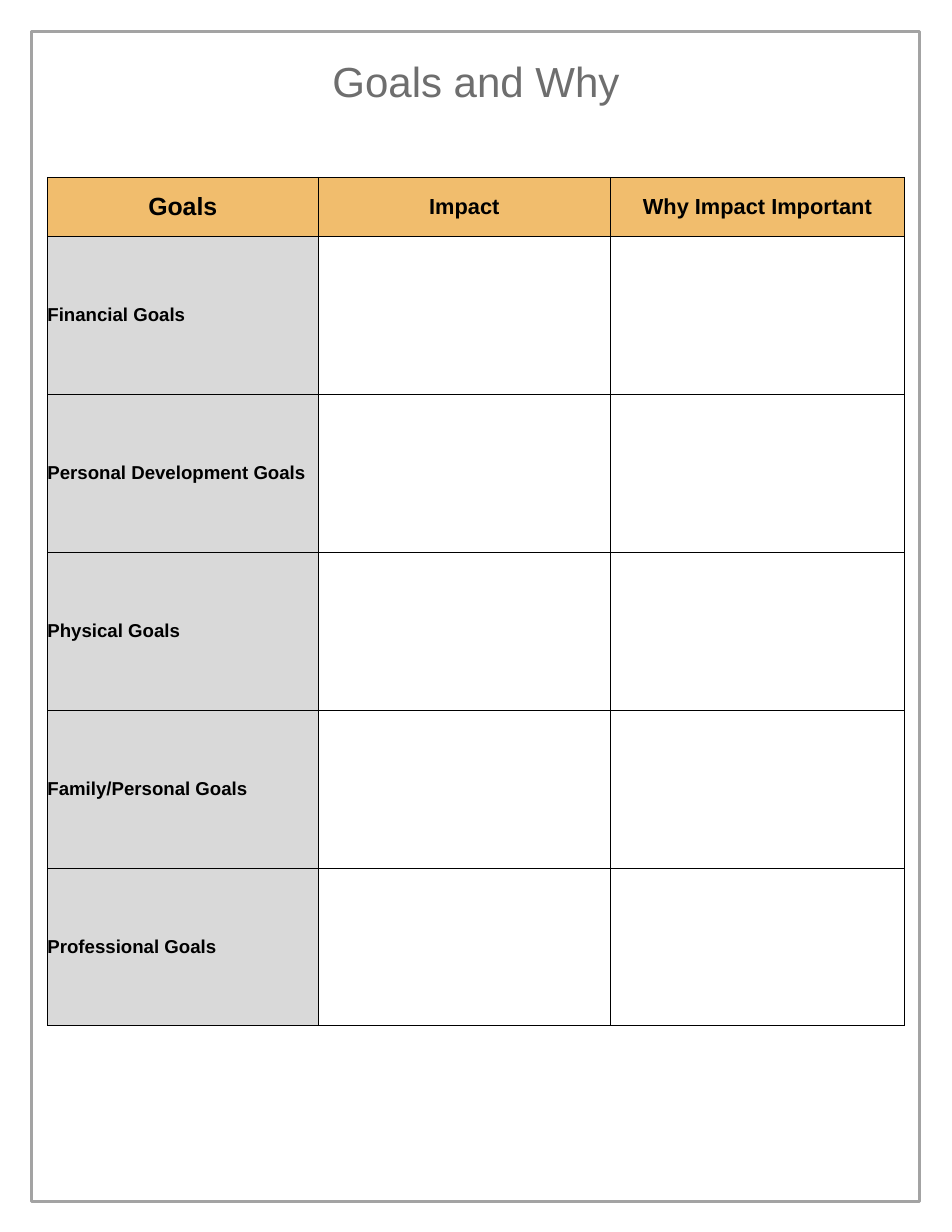
from lxml import etree
from pptx import Presentation
from pptx.dml.color import RGBColor
from pptx.enum.shapes import MSO_SHAPE
from pptx.enum.text import MSO_ANCHOR, PP_ALIGN
from pptx.util import Pt

RECTANGLE = MSO_SHAPE.RECTANGLE
TOP, MIDDLE = MSO_ANCHOR.TOP, MSO_ANCHOR.MIDDLE
LEFT, CENTER = PP_ALIGN.LEFT, PP_ALIGN.CENTER
FRAME_GRAY = RGBColor(0xA3, 0xA3, 0xA3)
TITLE_GRAY = RGBColor(0x6E, 0x6E, 0x6E)
HEADER_ORANGE = RGBColor(0xF1, 0xBD, 0x6D)
LABEL_GRAY = RGBColor(0xD9, 0xD9, 0xD9)
BLACK = RGBColor(0, 0, 0)
DRAWING = "http://schemas.openxmlformats.org/drawingml/2006/main"


def write_text(text_frame, text, size, color, alignment, bold=False):
    text_frame.text = text
    para = text_frame.paragraphs[0]
    para.alignment = alignment
    font = para.runs[0].font
    font.name = "Arial"
    font.size = Pt(size)
    font.bold = bold
    font.color.rgb = color


def add_borders(cell):
    properties = cell._tc.get_or_add_tcPr()
    for index, side in enumerate(("lnL", "lnR", "lnT", "lnB")):
        border = etree.fromstring(
            f'<a:{side} xmlns:a="{DRAWING}" w="{Pt(0.5)}">'
            f'<a:solidFill><a:srgbClr val="{BLACK}"/></a:solidFill></a:{side}>'
        )
        properties.insert(index, border)


deck = Presentation()
deck.slide_width = Pt(612)
deck.slide_height = Pt(792)
page = deck.slides.add_slide(deck.slide_layouts[6])

frame = page.shapes.add_shape(RECTANGLE, Pt(20.2), Pt(20), Pt(571), Pt(752.4))
frame.shadow.inherit = False
frame.fill.background()
frame.line.color.rgb = FRAME_GRAY
frame.line.width = Pt(2)

title_box = page.shapes.add_textbox(Pt(30.5), Pt(31.7), Pt(551), Pt(74))
title = title_box.text_frame
title.word_wrap = True
title.vertical_anchor = TOP
title.margin_left = title.margin_right = Pt(8)
title.margin_top = title.margin_bottom = Pt(4)
write_text(title, "Goals and Why", 27, TITLE_GRAY, CENTER)

headers = [("Goals", 16), ("Impact", 14), ("Why Impact Important", 14)]
goals = [
    "Financial Goals",
    "Personal Development Goals",
    "Physical Goals",
    "Family/Personal Goals",
    "Professional Goals",
]
column_widths = [174, 188, 189]
row_heights = [38] + [101.5] * len(goals)

table_frame = page.shapes.add_table(
    len(row_heights), len(column_widths), Pt(30.5), Pt(114),
    Pt(sum(column_widths)), Pt(sum(row_heights)),
)
table = table_frame.table
table.first_row = False
table.horz_banding = False
for column, width in zip(table.columns, column_widths):
    column.width = Pt(width)
for row, height in zip(table.rows, row_heights):
    row.height = Pt(height)

for cell in table.iter_cells():
    cell.margin_left = cell.margin_right = 0
    cell.margin_top = cell.margin_bottom = 0
    cell.vertical_anchor = MIDDLE
    cell.fill.background()
    add_borders(cell)

for column_index, (header, size) in enumerate(headers):
    cell = table.cell(0, column_index)
    cell.fill.solid()
    cell.fill.fore_color.rgb = HEADER_ORANGE
    write_text(cell.text_frame, header, size, BLACK, CENTER, bold=True)

for row_index, goal in enumerate(goals, start=1):
    cell = table.cell(row_index, 0)
    cell.fill.solid()
    cell.fill.fore_color.rgb = LABEL_GRAY
    write_text(cell.text_frame, goal, 12, BLACK, LEFT, bold=True)

deck.save("out.pptx")
